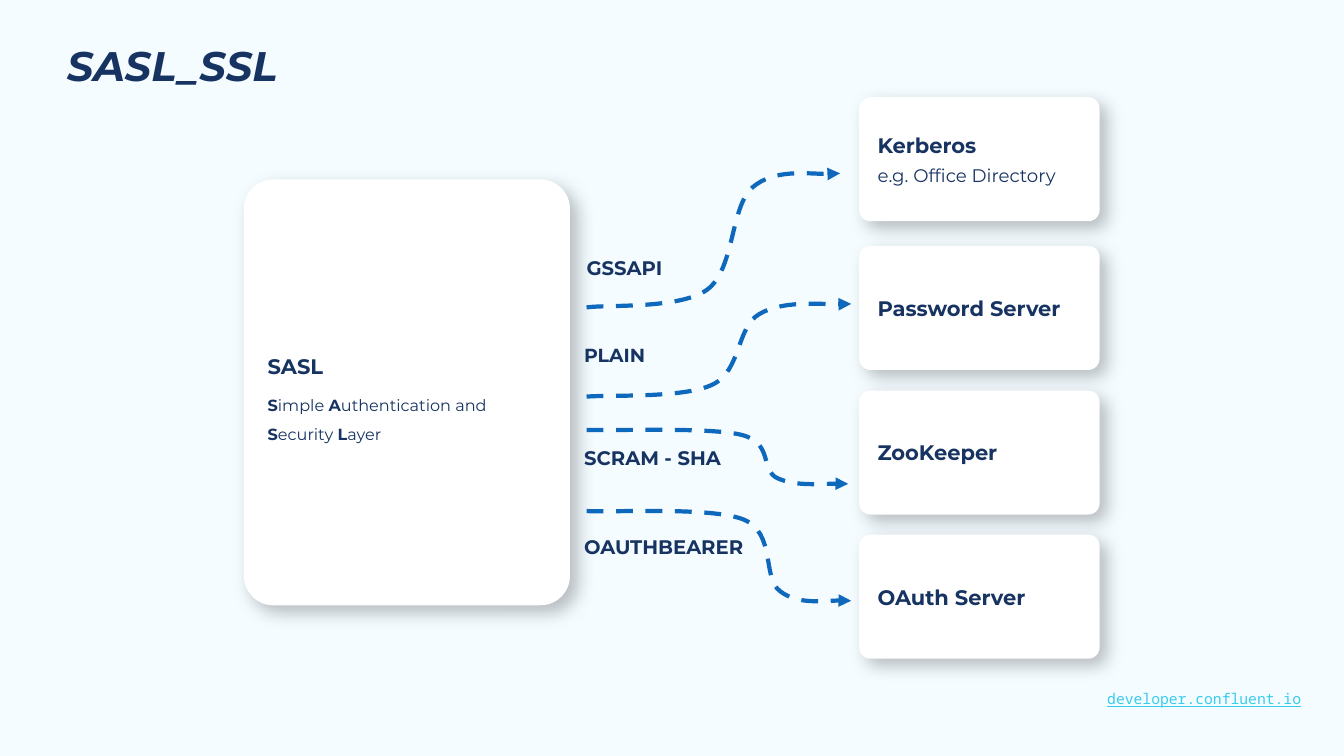
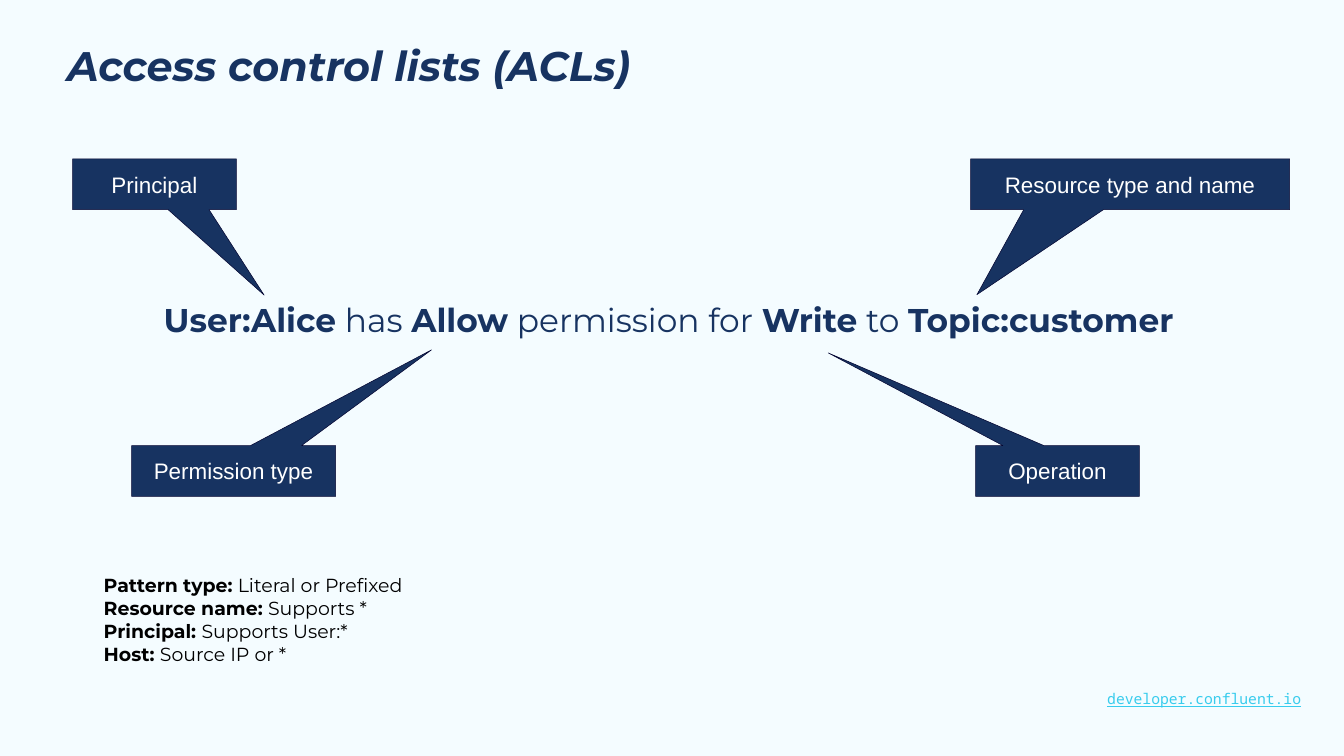
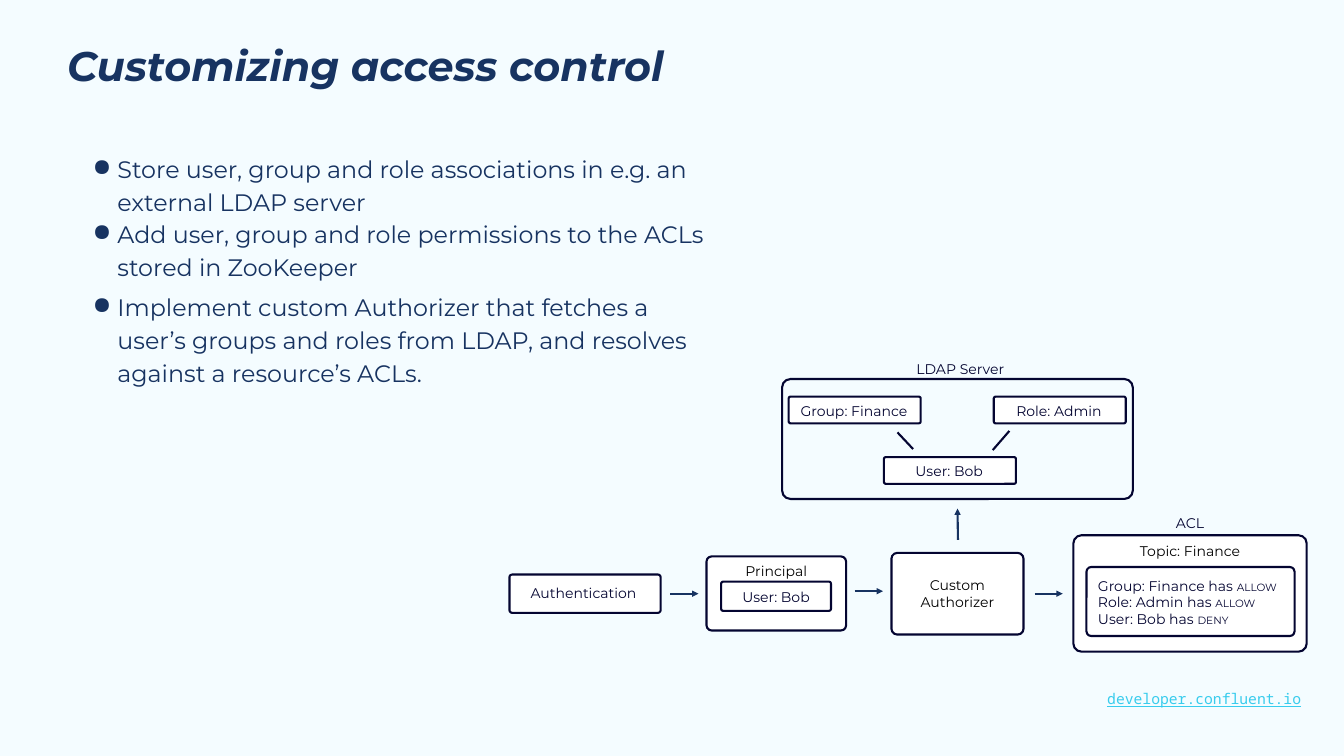
import pptx
import pptx.util
import pptx.dml.color
import pptx.enum.dml
import pptx.enum.shapes
import pptx.enum.text
import pptx.oxml.ns
from lxml import etree

# Shared style; one grid column or row is one inch
COLS, ROWS = 26.67, 15
PALE, NAVY, INK, BLUE, CYAN = "F4FCFF", "173361", "040531", "0E68BC", "38CCED"
WHITE, BLACK = "FFFFFF", "000000"
SANS, MONO = "Montserrat", "Noto Sans Mono"
FOOT = "developer.confluent.io"
KIND = pptx.enum.shapes.MSO_SHAPE
ALIGN = pptx.enum.text.PP_ALIGN
ANCHOR = pptx.enum.text.MSO_ANCHOR
inch, qn = pptx.util.Inches, pptx.oxml.ns.qn

# Slide 1: text between bars is bold
CARD_X, CARD_W, CARD_H = 17.05, 4.77, 2.46
CARDS = [
    (1.93, ["Kerberos", ("e.g. Office Directory", {"size": 26, "bold": False})]),
    (4.88, ["Password Server"]),
    (7.75, ["ZooKeeper"]),
    (10.61, ["OAuth Server"]),
]
SASL = ["SASL", ("|S|imple |A|uthentication and |S|ecurity |L|ayer",
                 {"size": 23, "bold": False})]
MODES = [
    ("GSSAPI", 28, 11.64, 5, 1.91),
    ("PLAIN", 27, 11.59, 6.76, 1.91),
    ("SCRAM - SHA", 28, 11.59, 8.77, 3.68),
    ("OAUTHBEARER", 28, 11.59, 10.54, 4.23),
]
CURVES = [
    [(11.64, 6.1), (12.04, 6.04), (13.48, 6.14), (14.03, 5.75), (14.58, 5.35),
     (14.49, 4.11), (14.93, 3.72), (15.37, 3.34), (16.38, 3.49), (16.67, 3.44)],
    [(11.64, 7.87), (12.06, 7.83), (13.57, 7.91), (14.14, 7.63), (14.71, 7.36),
     (14.61, 6.49), (15.07, 6.23), (15.53, 5.96), (16.59, 6.06), (16.89, 6.03)],
    [(11.64, 8.53), (12.16, 8.55), (14.09, 8.47), (14.72, 8.63), (15.35, 8.79),
     (15.08, 9.33), (15.43, 9.49), (15.79, 9.65), (16.6, 9.58), (16.83, 9.6)],
    [(11.64, 10.14), (12.16, 10.17), (14.12, 10.05), (14.76, 10.31), (15.4, 10.58),
     (15.12, 11.47), (15.48, 11.73), (15.83, 12), (16.66, 11.89), (16.89, 11.92)],
]

# Slide 2: callouts as text, left, top, width, tip offset in shares of the box
RULE = "|User:Alice| has |Allow| permission for |Write| to |Topic:customer|"
CALLS = [
    ("Principal", 1.44, 3.15, 3.25, (0.67, 2.18)),
    ("Permission type", 2.61, 8.84, 4.05, (0.97, -2.38)),
    ("Operation", 19.36, 8.84, 3.25, (-1.4, -2.32)),
    ("Resource type and name", 19.26, 3.15, 6.33, (-0.48, 2.17)),
]
FACTS = [
    "|Pattern type: |Literal or Prefixed",
    "|Resource name: |Supports *",
    "|Principal: |Supports User:*",
    "|Host: |Source IP or *",
]

# Slide 3: bullets with space before; boxes as place, text, anchor
POINTS = [
    ("Store user, group and role associations in e.g. an external LDAP server", 0),
    ("Add user, group and role permissions to the ACLs stored in ZooKeeper", 0),
    ("Implement custom Authorizer that fetches a user’s groups and roles from LDAP, "
     "and resolves against a resource’s ACLs.", 10),
]
FRAMES = [
    ((10.11, 11.4, 3, 0.76), "", "top"),
    ((14.02, 11.04, 2.77, 1.47), "Principal", "top"),
    ((14.31, 11.54, 2.18, 0.58), "", "top"),
    ((17.69, 10.97, 2.62, 1.62), "Custom Authorizer", "middle"),
    ((21.3, 10.62, 4.63, 2.31), "Topic: Finance", "top"),
    ((21.56, 11.25, 4.13, 1.37), "", "top"),
]
PLATES = [
    ((10.18, 11.5, 2.8, 0.56), "Authentication"),
    ((14.6, 11.57, 1.6, 0.38), "User: Bob"),
]
GRANTS = ["Group: Finance has |ALLOW|", "Role: Admin has |ALLOW|", "User: Bob has |DENY|"]
LDAP = (15.52, 7.52, 6.96, 2.38)
NODES = [
    ("Group: Finance", 15.65, 7.87),
    ("Role: Admin", 19.72, 7.87),
    ("User: Bob", 17.54, 9.07),
]
HEADS = [((17.48, 7.05, 3.15, 0.66), "LDAP Server"), ((23.15, 10.11, 0.93, 0.53), "ACL")]
LINKS = [((17.81, 8.58), (18.12, 8.91)), ((20.03, 8.55), (19.7, 8.93))]
STEP = 0.56
FLOWS = [((x, y), (x + STEP, y)) for x, y in
         [(13.3, 11.78), (16.96, 11.73), (20.53, 11.78)]]
FLOWS.append(((19.01, 10.71), (19, 10.09)))


def tint(text):
    return pptx.dml.color.RGBColor.from_string(text)


def place(box):
    return [inch(n) for n in box]


def write(shape, paras, ins=(0.1, 0.1, 0.1, 0.1), anchor="top", **base):
    """Fill a shape; a paragraph is a string or (string, changes to the style)."""
    frame = shape.text_frame
    frame.word_wrap = True
    frame.auto_size = pptx.enum.text.MSO_AUTO_SIZE.NONE
    frame.vertical_anchor = ANCHOR.MIDDLE if anchor == "middle" else ANCHOR.TOP
    frame.margin_left, frame.margin_top, frame.margin_right, frame.margin_bottom = place(ins)
    for i, item in enumerate(paras):
        text, more = (item, {}) if isinstance(item, str) else item
        look = {"font": SANS, "color": NAVY, "bold": False, "align": "LEFT", **base, **more}
        para = frame.paragraphs[0] if i == 0 else frame.add_paragraph()
        para.alignment = getattr(ALIGN, look["align"])
        para.line_spacing = look.get("lead", 1.0)
        para.space_before = pptx.util.Pt(look.get("gap", 0) if i else 0)
        if "bullet" in look:
            mark(para, look["bullet"], look["color"])
        font = para.font
        font.name, font.size = look["font"], pptx.util.Pt(look["size"])
        font.color.rgb = tint(look["color"])
        font.bold, font.italic = look["bold"], look.get("italic", False)
        font.underline = look.get("under", False)
        for j, part in enumerate(text.split("|")):
            if part:
                run = para.add_run()
                run.text = part
                if j % 2 and "small" in look:
                    run.font.size = pptx.util.Pt(look["small"])
                elif j % 2:
                    run.font.bold = True


def mark(para, sign, color):
    props = para._p.get_or_add_pPr()
    props.set("marL", str(inch(0.5)))
    props.set("indent", str(inch(-0.49)))
    hue = etree.SubElement(props, qn("a:buClr"))
    etree.SubElement(hue, qn("a:srgbClr"), val=color)
    etree.SubElement(props, qn("a:buChar"), char=sign)


def note(slide, box, paras, **look):
    shape = slide.shapes.add_textbox(*place(box))
    write(shape, paras, **look)
    return shape


def block(slide, kind, box, fill=WHITE, line=None, width=3, adj=()):
    shape = slide.shapes.add_shape(kind, *place(box))
    shape.shadow.inherit = False
    for i, part in enumerate(adj):
        shape.adjustments[i] = part
    if fill:
        shape.fill.solid()
        shape.fill.fore_color.rgb = tint(fill)
    else:
        shape.fill.background()
    if line:
        stroke(shape, line, width)
    else:
        shape.line.fill.background()
    return shape


def stroke(shape, color, width, arrow=False, dash=False):
    shape.line.color.rgb = tint(color)
    shape.line.width = pptx.util.Pt(width)
    if dash:
        shape.line.dash_style = pptx.enum.dml.MSO_LINE.DASH
    if arrow:
        etree.SubElement(shape.element.spPr.find(qn("a:ln")), qn("a:tailEnd"), type="triangle")


def card(slide, box, paras, **look):
    shape = block(slide, KIND.ROUNDED_RECTANGLE, box, adj=[0.09])
    glow = etree.SubElement(
        shape.element.spPr.find(qn("a:effectLst")), qn("a:outerShdw"),
        blurRad=str(pptx.util.Pt(25.9)), dist=str(pptx.util.Pt(14.2)),
        dir=str(44 * 60000), algn="bl", rotWithShape="0")
    hue = etree.SubElement(glow, qn("a:srgbClr"), val=BLACK)
    etree.SubElement(hue, qn("a:alpha"), val="25000")
    write(shape, paras, ins=(0.3, 0.1, 0.1, 0.1), anchor="middle",
          size=30, bold=True, gap=10, **look)


def curve(slide, dots):
    """Dashed arrow: a start point, then three points for each Bézier piece."""
    dots = [tuple(place(dot)) for dot in dots]
    pen = slide.shapes.build_freeform(*dots[0])
    pen.add_line_segments(dots[1:], close=False)
    shape = pen.convert_to_shape()
    shape.shadow.inherit = False
    shape.fill.background()
    stroke(shape, BLUE, 6, arrow=True, dash=True)
    trail = shape.element.spPr.find(".//" + qn("a:path"))
    legs = trail.findall(qn("a:lnTo"))
    for i in range(0, len(legs), 3):
        bend = etree.SubElement(trail, qn("a:cubicBezTo"))
        for leg in legs[i:i + 3]:
            bend.append(leg[0])
            trail.remove(leg)


def link(slide, start, end, color, arrow=False):
    line = slide.shapes.add_connector(
        pptx.enum.shapes.MSO_CONNECTOR.STRAIGHT, *place(start + end))
    stroke(line, color, 3, arrow)
    etree.SubElement(line.element.spPr, qn("a:effectLst"))


def page(deck, title):
    slide = deck.slides.add_slide(deck.slide_layouts[5])
    head = slide.shapes.title
    head.left, head.top, head.width, head.height = place((1.33, 0.77, 22.68, 1.24))
    write(head, [title], ins=(0, 0.13, 0.27, 0.13), size=59, bold=True, italic=True, lead=0.9)
    return slide


def footer(deck, slide):
    """Put the address on the layout, so every slide shows it."""
    layout = deck.slide_layouts[5]
    for spare in list(layout.placeholders)[1:]:
        spare.element.getparent().remove(spare.element)
    foot = note(slide, (18.09, 13.58, 7.83, 0.56), [FOOT],
                font=MONO, size=21, color=CYAN, under=True, align="RIGHT")
    layout.shapes.element.append(foot.element)


def sasl(slide):
    card(slide, (4.84, 3.56, 6.47, 8.45), SASL, lead=1.5)
    for top, paras in CARDS:
        card(slide, (CARD_X, top, CARD_W, CARD_H), paras)
    for dots in CURVES:
        curve(slide, dots)
    for text, size, left, top, wide in MODES:
        note(slide, (left, top, wide, 0.83), [text], ins=(0, 0, 0.13, 0.13),
             size=size, bold=True, lead=1.15)


def acls(slide):
    note(slide, (3.03, 5.82, 20.61, 1.07), [RULE], ins=(0, 0, 0.13, 0.13),
         size=47, align="CENTER", lead=1.15)
    for text, left, top, wide, tip in CALLS:
        shape = block(slide, KIND.RECTANGULAR_CALLOUT, (left, top, wide, 1.01),
                      NAVY, INK, 0.75, tip)
        write(shape, [text], anchor="middle", font="Arial", size=32,
              color=WHITE, align="CENTER")
    note(slide, (1.96, 11.29, 7.79, 2.02), FACTS, size=27, color=BLACK)


def custom(slide):
    note(slide, (1.33, 2.88, 13.02, 7.38), [(text, {"gap": gap}) for text, gap in POINTS],
         ins=(0.5, 0.1, 0.1, 0.1), size=34, lead=1.15, bullet="●")

    def frame(box, fill=WHITE):
        return block(slide, KIND.ROUNDED_RECTANGLE, box, fill, INK, adj=[0.07])

    label = {"size": 20, "color": INK, "align": "CENTER"}
    # Request chain
    for box, text, anchor in FRAMES:
        shape = frame(box)
        if text:
            write(shape, [text], anchor=anchor, **{**label, "color": BLACK})
    for box, text in PLATES:
        write(block(slide, KIND.RECTANGLE, box), [text], **label)
    write(block(slide, KIND.RECTANGLE, (21.69, 11.33, 3.87, 1.24)), GRANTS,
          anchor="middle", size=20, small=15, color=INK)
    # Directory tree
    frame(LDAP, None)
    for text, left, top in NODES:
        frame((left, top, 2.62, 0.53))
        note(slide, (left + 0.07, top + 0.01, 2.45, 0.36), [text], **label)
    for box, text in HEADS:
        note(slide, box, [text], **label)
    for start, end in LINKS:
        link(slide, start, end, INK)
    for start, end in FLOWS:
        link(slide, start, end, NAVY, arrow=True)


def main():
    deck = pptx.Presentation()
    deck.slide_width, deck.slide_height = inch(COLS), inch(ROWS)
    back = deck.slide_master.background.fill
    back.solid()
    back.fore_color.rgb = tint(PALE)
    first = page(deck, "SASL_SSL")
    footer(deck, first)
    sasl(first)
    acls(page(deck, "Access control lists (ACLs)"))
    custom(page(deck, "Customizing access control"))
    deck.save("out.pptx")


if __name__ == "__main__":
    main()
